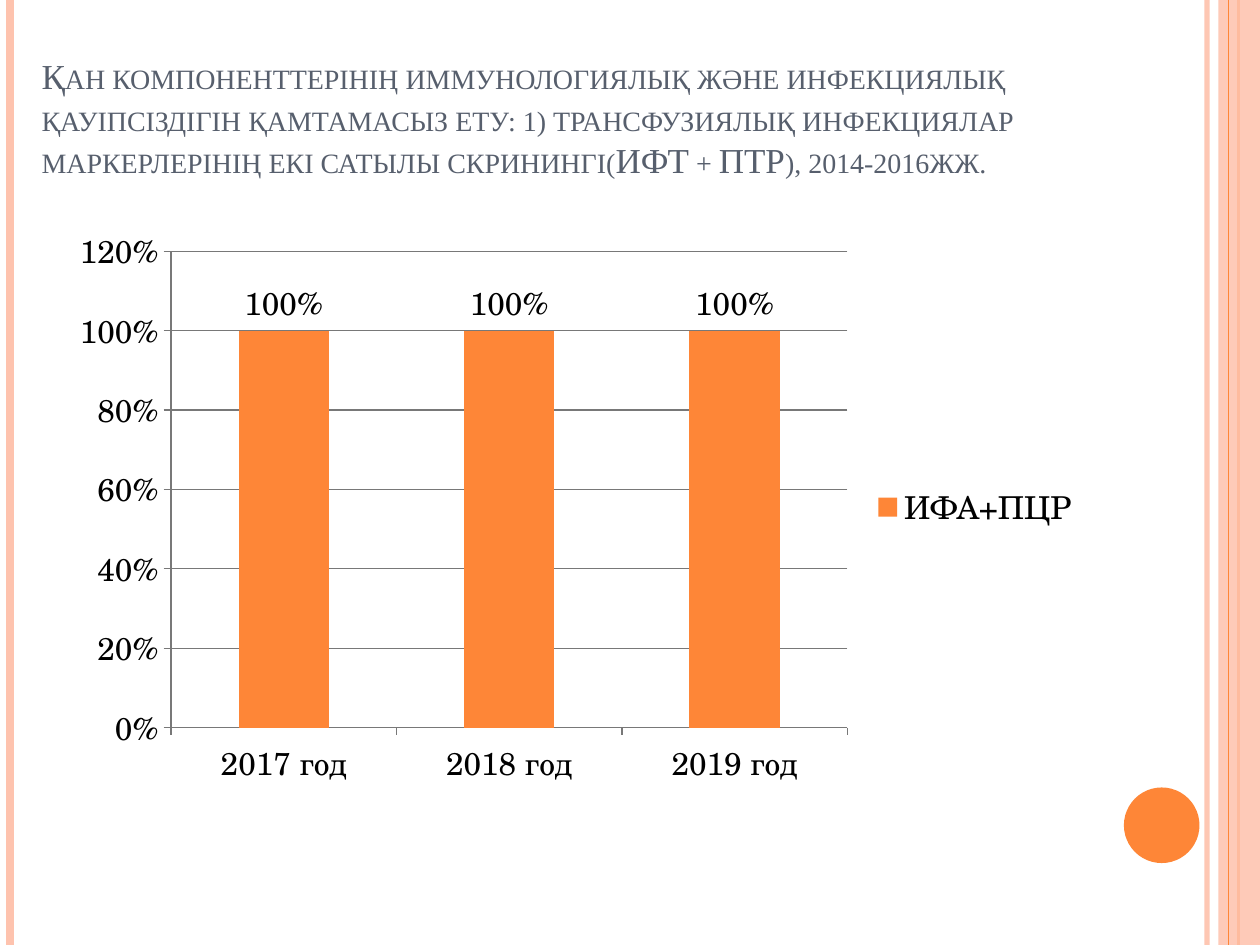
"""Build a slide with a column chart of two-stage infection screening."""
from dataclasses import dataclass
from typing import Any

from lxml import etree
from pptx import Presentation
from pptx.chart import data as chart_data
from pptx.dml.color import RGBColor
from pptx.enum import chart as chart_enum, shapes, text
from pptx.oxml import ns
from pptx.util import Inches, Pt

ORANGE = RGBColor(0xFE, 0x86, 0x37)
PEACH = RGBColor(0xFE, 0xC3, 0xAE)
SLATE = RGBColor(0x57, 0x5F, 0x6D)
GRAY = RGBColor(0x78, 0x78, 0x78)
BLACK = RGBColor(0, 0, 0)
TITLE_FONT = "Times New Roman"
CHART_FONT = "TeX Gyre Schola"
SLIDE_WIDTH, SLIDE_HEIGHT = 10, 7.5
TITLE = (
    "Қан компоненттерінің иммунологиялық және инфекциялық қауіпсіздігін "
    "қамтамасыз ету: 1) трансфузиялық инфекциялар маркерлерінің екі сатылы "
    "скринингі(ИФТ + ПТР), 2014-2016жж."
)


@dataclass(frozen=True)
class Stripe:
    x: float
    color: RGBColor
    width: float
    opacity: int = 100


@dataclass(frozen=True)
class Block:
    kind: shapes.MSO_SHAPE
    left: float
    top: float
    width: float
    height: float
    color: RGBColor
    opacity: int = 100


STRIPES = (
    Stripe(9.58, PEACH, 3, 93),
    Stripe(0.08, PEACH, 4.5),
    Stripe(9.83, ORANGE, 1.5),
)
EDGE_BAND = Block(shapes.MSO_SHAPE.RECTANGLE, 9.67, 0, 0.33, SLIDE_HEIGHT, PEACH, 87)
BAND_STRIPE = Stripe(9.75, ORANGE, 0.75)
CIRCLE = Block(shapes.MSO_SHAPE.OVAL, 8.92, 6.25, 0.6, 0.6, ORANGE)


def set_opacity(element: Any, percent: int) -> None:
    if percent < 100:
        color = next(element.iter(ns.qn("a:srgbClr")))
        etree.SubElement(color, ns.qn("a:alpha")).set("val", str(percent * 1000))


def draw_stripe(slide: Any, stripe: Stripe) -> None:
    x = Inches(stripe.x)
    connector = slide.shapes.add_connector(
        shapes.MSO_CONNECTOR.STRAIGHT, x, 0, x, Inches(SLIDE_HEIGHT)
    )
    connector.line.color.rgb = stripe.color
    connector.line.width = Pt(stripe.width)
    properties = connector._element.spPr
    set_opacity(properties, stripe.opacity)
    etree.SubElement(properties, ns.qn("a:effectLst"))


def draw_block(slide: Any, block: Block) -> None:
    bounds = map(Inches, (block.left, block.top, block.width, block.height))
    shape = slide.shapes.add_shape(block.kind, *bounds)
    shape.shadow.inherit = False
    shape.fill.solid()
    shape.fill.fore_color.rgb = block.color
    shape.line.fill.background()
    set_opacity(shape._element.spPr, block.opacity)


def format_font(font: Any, *, name: str, size: float, color: RGBColor) -> None:
    font.name = name
    font.size = Pt(size)
    font.color.rgb = color


def write_text(
    frame: Any, content: str, *, name: str, size: float, color: RGBColor,
    small_caps: bool = False,
) -> None:
    paragraph = frame.paragraphs[0]
    paragraph.alignment = text.PP_ALIGN.LEFT
    run = paragraph.add_run()
    run.text = content
    format_font(run.font, name=name, size=size, color=color)
    if small_caps:
        run._r.get_or_add_rPr().set("cap", "small")


def draw_title(slide: Any) -> None:
    title = slide.shapes.title
    title.left, title.top = Inches(0.23), Inches(0)
    title.width, title.height = Inches(9.27), Inches(1.48)
    frame = title.text_frame
    frame.word_wrap = True
    frame.auto_size = text.MSO_AUTO_SIZE.NONE
    frame.vertical_anchor = text.MSO_ANCHOR.BOTTOM
    write_text(frame, TITLE, name=TITLE_FONT, size=20, color=SLATE, small_caps=True)


def draw_chart(slide: Any) -> None:
    data = chart_data.CategoryChartData(number_format="0%")
    data.categories = [f"{year} год" for year in (2017, 2018, 2019)]
    data.add_series("ИФА+ПЦР", (1, 1, 1))
    chart = slide.shapes.add_chart(
        chart_enum.XL_CHART_TYPE.COLUMN_CLUSTERED,
        Inches(0.47), Inches(1.72), Inches(8.2), Inches(4.61), data,
    ).chart
    format_font(chart.font, name=CHART_FONT, size=18, color=BLACK)
    chart.has_title = False
    chart.has_legend = True
    chart.legend.position = chart_enum.XL_LEGEND_POSITION.RIGHT
    chart.legend.include_in_layout = False

    for axis in (chart.category_axis, chart.value_axis):
        axis.major_tick_mark = chart_enum.XL_TICK_MARK.OUTSIDE
        axis.minor_tick_mark = chart_enum.XL_TICK_MARK.NONE
        axis.format.line.color.rgb = GRAY
    value_axis = chart.value_axis
    value_axis.minimum_scale, value_axis.maximum_scale = 0, 1.2
    value_axis.major_unit = 0.2
    value_axis.has_major_gridlines = True
    value_axis.major_gridlines.format.line.color.rgb = GRAY
    value_axis.tick_labels.number_format = "0%"
    value_axis.tick_labels.number_format_is_linked = False

    plot = chart.plots[0]
    plot.gap_width = 150
    plot.vary_by_categories = False
    series = plot.series[0]
    series.format.fill.solid()
    series.format.fill.fore_color.rgb = ORANGE
    labels = series.data_labels
    labels.show_value = True
    labels.number_format = "0%"
    labels.number_format_is_linked = False
    labels.position = chart_enum.XL_LABEL_POSITION.OUTSIDE_END


def main() -> None:
    presentation = Presentation()
    presentation.slide_width = Inches(SLIDE_WIDTH)
    presentation.slide_height = Inches(SLIDE_HEIGHT)
    slide = presentation.slides.add_slide(presentation.slide_layouts[5])
    for stripe in STRIPES:
        draw_stripe(slide, stripe)
    draw_block(slide, EDGE_BAND)
    draw_stripe(slide, BAND_STRIPE)
    draw_block(slide, CIRCLE)
    draw_title(slide)
    draw_chart(slide)
    presentation.save("out.pptx")


if __name__ == "__main__":
    main()
